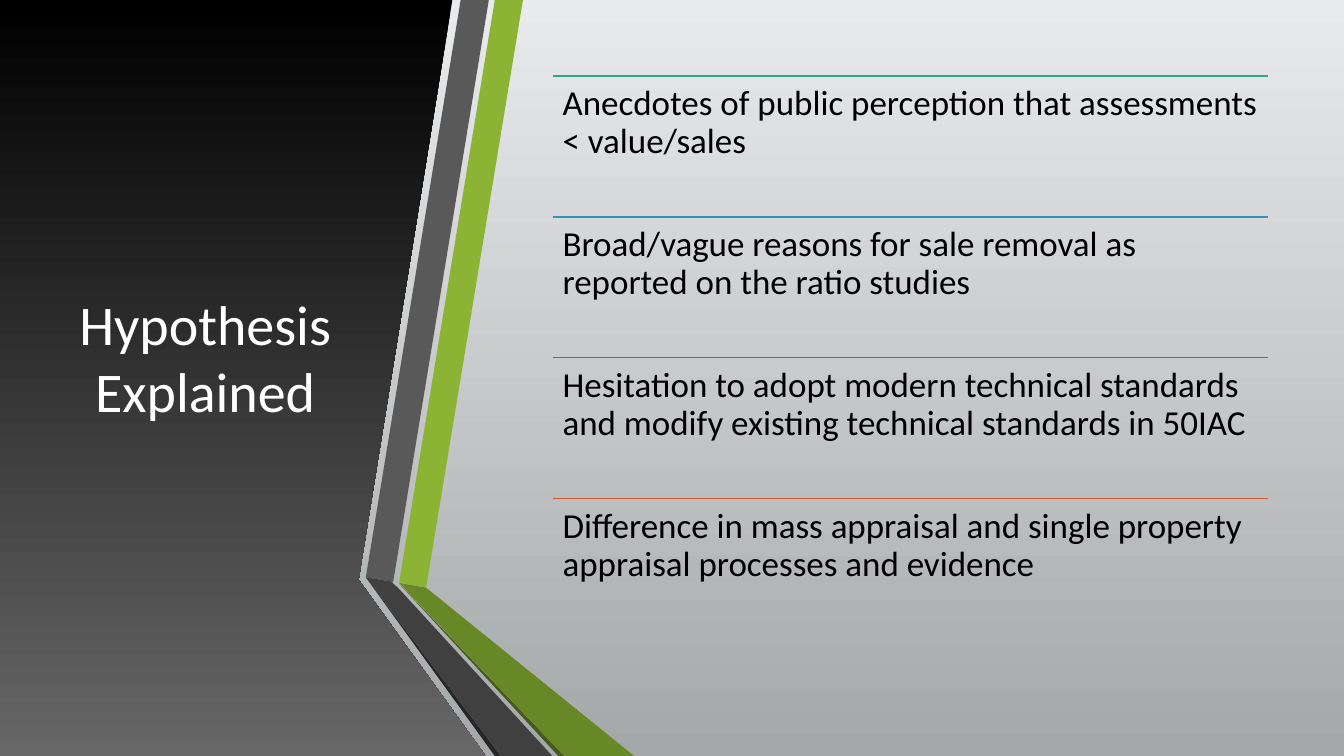
from dataclasses import dataclass

import pptx
import pptx.dml.color
import pptx.dml.fill
import pptx.enum.shapes
import pptx.enum.text
import pptx.oxml.ns
import pptx.slide
import pptx.util
from lxml import etree
from pptx.util import Cm

FONT = "Calibri"
SLIDE_WIDTH, SLIDE_HEIGHT = 33.87, 19.05
TITLE_ONLY = 5

# Hypothesis list, in centimetres
LIST_LEFT, LIST_TOP, LIST_WIDTH = 13.93, 1.91, 18.03
ROW_HEIGHT = 3.55
ROW_INSET = 0.25


@dataclass(frozen=True)
class Facet:
    """A flat polygon; its corners are in centimetres."""
    color: str
    corners: tuple[tuple[float, float], ...]


@dataclass(frozen=True)
class Reason:
    rule_color: str
    text: str


PANEL = Facet("000000", ((0, 0), (11.4, 0), (9.04, 14.61),
                         (12.24, SLIDE_HEIGHT), (0, SLIDE_HEIGHT)))

RIBBON = (
    Facet("8BB434", ((10.06, 14.68), (10.74, 14.81), (13.18, 0), (12.47, 0))),
    Facet("595959", ((12.32, 0), (11.61, 0), (9.22, 14.55), (9.91, 14.66))),
    Facet("262626", ((9.22, 14.55), (12.47, SLIDE_HEIGHT), (12.62, SLIDE_HEIGHT))),
    Facet("465A1A", ((10.06, 14.71), (14.07, SLIDE_HEIGHT), (14.22, SLIDE_HEIGHT))),
    Facet("688727", ((10.06, 14.69), (14.22, SLIDE_HEIGHT),
                     (15.98, SLIDE_HEIGHT), (10.74, 14.81))),
    Facet("404040", ((13.92, SLIDE_HEIGHT), (10.03, 14.81), (9.88, 14.68),
                     (9.91, 14.66), (9.22, 14.55), (12.62, SLIDE_HEIGHT))),
)

REASONS = (
    Reason("33A583", "Anecdotes of public perception that assessments < value/sales"),
    Reason("3594B4", "Broad/vague reasons for sale removal as reported on the ratio studies"),
    Reason("6063B4", "Hesitation to adopt modern technical standards and modify "
                     "existing technical standards in 50IAC"),
    Reason("D35731", "Difference in mass appraisal and single property "
                     "appraisal processes and evidence"),
)


def rgb(color: str) -> pptx.dml.color.RGBColor:
    return pptx.dml.color.RGBColor.from_string(color)


def fill_downward(fill: pptx.dml.fill.FillFormat, top: str, bottom: str) -> None:
    fill.gradient()
    fill.gradient_angle = 270
    for stop, color in zip(fill.gradient_stops, (top, bottom)):
        stop.color.rgb = rgb(color)


def draw_facet(slide: pptx.slide.Slide, facet: Facet) -> pptx.dml.fill.FillFormat:
    """Draw the polygon and return its fill."""
    start, *others = [(Cm(x), Cm(y)) for x, y in facet.corners]
    builder = slide.shapes.build_freeform(*start)
    builder.add_line_segments(others, close=True)
    polygon = builder.convert_to_shape()
    polygon.shadow.inherit = False
    polygon.line.fill.background()
    polygon.fill.solid()
    polygon.fill.fore_color.rgb = rgb(facet.color)
    return polygon.fill


def draw_title(slide: pptx.slide.Slide, text: str) -> None:
    title = slide.shapes.title
    # Bring the placeholder in front of the panel
    slide.shapes._spTree.append(title._element)
    title.left, title.top = Cm(1.5), Cm(1.9)
    title.width, title.height = Cm(7.34), Cm(14.17)
    frame = title.text_frame
    frame.text = text
    frame.word_wrap = True
    frame.auto_size = pptx.enum.text.MSO_AUTO_SIZE.NONE
    frame.vertical_anchor = pptx.enum.text.MSO_ANCHOR.MIDDLE
    paragraph = frame.paragraphs[0]
    paragraph.alignment = pptx.enum.text.PP_ALIGN.CENTER
    paragraph.font.name = FONT
    paragraph.font.size = pptx.util.Pt(40)
    paragraph.font.color.rgb = rgb("FFFFFF")


def draw_reason(slide: pptx.slide.Slide, reason: Reason, top: float) -> None:
    rule = slide.shapes.add_connector(
        pptx.enum.shapes.MSO_CONNECTOR.STRAIGHT,
        Cm(LIST_LEFT), Cm(top), Cm(LIST_LEFT + LIST_WIDTH), Cm(top))
    rule.line.color.rgb = rgb(reason.rule_color)
    rule.line.width = pptx.util.Pt(1.25)
    etree.SubElement(rule._element.spPr, pptx.oxml.ns.qn("a:effectLst"))

    statement = slide.shapes.add_textbox(
        Cm(LIST_LEFT), Cm(top), Cm(LIST_WIDTH), Cm(ROW_HEIGHT))
    frame = statement.text_frame
    frame.word_wrap = True
    frame.margin_left = frame.margin_right = Cm(ROW_INSET)
    frame.margin_top = frame.margin_bottom = Cm(ROW_INSET)
    frame.text = reason.text
    paragraph = frame.paragraphs[0]
    paragraph.line_spacing = 0.9
    paragraph.font.name = FONT
    paragraph.font.size = pptx.util.Pt(25)
    paragraph.font.color.rgb = rgb("000000")


def main() -> None:
    presentation = pptx.Presentation()
    presentation.slide_width = Cm(SLIDE_WIDTH)
    presentation.slide_height = Cm(SLIDE_HEIGHT)
    slide = presentation.slides.add_slide(presentation.slide_layouts[TITLE_ONLY])

    # Backdrop and dark title panel
    fill_downward(slide.background.fill, "E9EAEB", "A5A8A9")
    fill_downward(draw_facet(slide, PANEL), PANEL.color, "676767")
    draw_title(slide, "Hypothesis Explained")

    # Folded ribbon
    for facet in RIBBON:
        draw_facet(slide, facet)

    # Ruled list of reasons
    for row, reason in enumerate(REASONS):
        draw_reason(slide, reason, LIST_TOP + row * ROW_HEIGHT)

    presentation.save("out.pptx")


if __name__ == "__main__":
    main()
